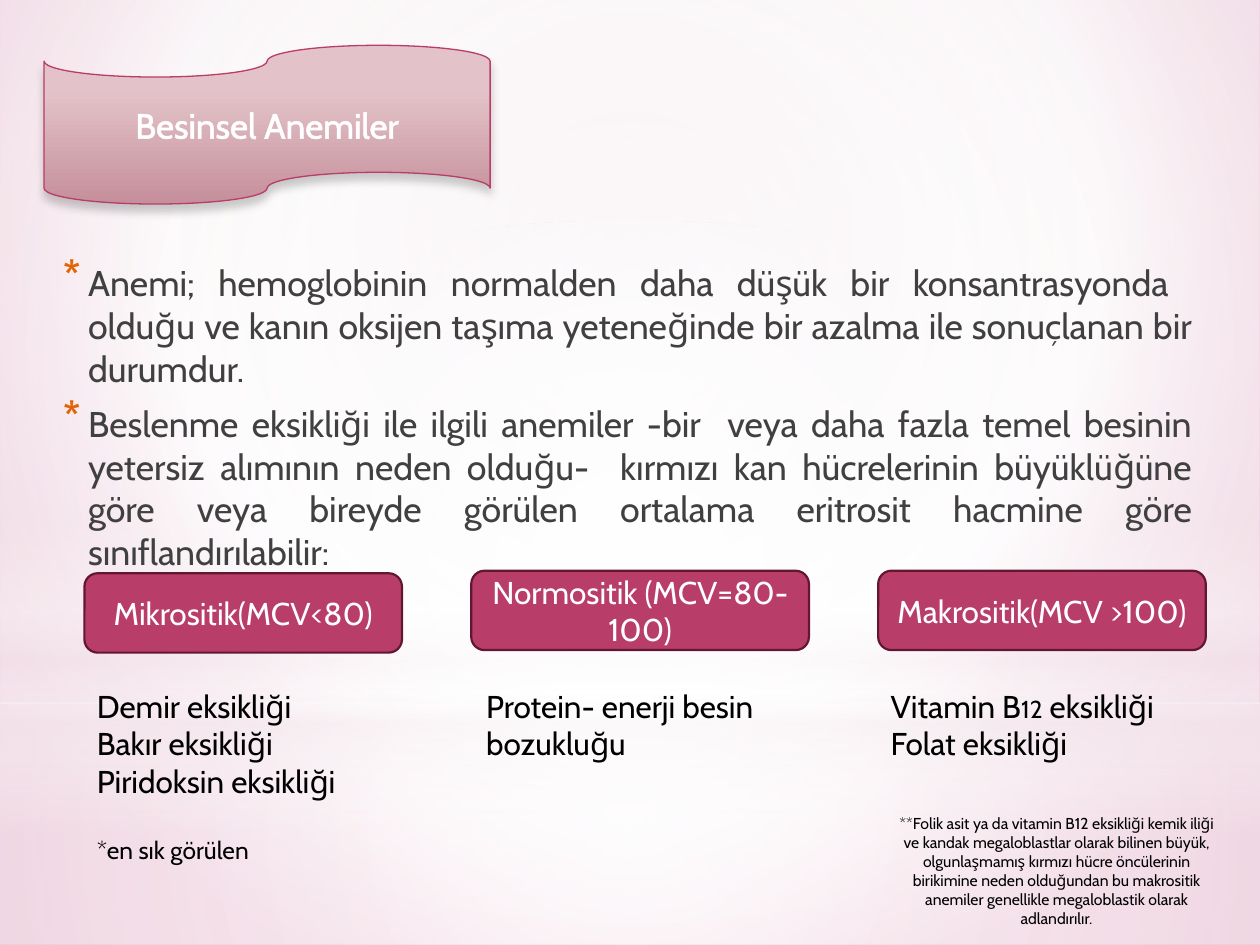
from dataclasses import dataclass

from lxml import etree
from pptx import Presentation
from pptx.dml.color import RGBColor
from pptx.enum.shapes import MSO_SHAPE as Shape
from pptx.enum.text import MSO_ANCHOR as Anchor, MSO_AUTO_SIZE as AutoSize, PP_ALIGN as Align
from pptx.oxml import parse_xml
from pptx.oxml.ns import nsdecls, qn
from pptx.util import Inches, Pt


@dataclass(frozen=True)
class Theme:
    font: str = "Cabin"
    white: str = "FFFFFF"
    black: str = "000000"
    body: str = "404040"
    bullet: str = "E36406"
    accent: str = "B83D68"
    accent_dark: str = "621631"
    blush: str = "F4E7ED"
    rose: str = "E3C3C9"
    rose_dark: str = "C58F9B"
    edge: str = "E09DBC"
    glow: str = "EDDAE2"
    title_size: float = 20
    body_size: float = 20.4
    card_size: float = 18
    note_size: float = 14
    small_size: float = 9


def gradient(stops, center=None):
    """Fill of (position, colour, opacity) stops: circular around center, else top to bottom."""
    marks = "".join(
        f'<a:gs pos="{pos * 1000}"><a:srgbClr val="{color}">'
        f'<a:alpha val="{opacity * 1000}"/></a:srgbClr></a:gs>'
        for pos, color, opacity in stops)
    if center:
        left, top, right, bottom = (side * 1000 for side in center)
        course = (f'<a:path path="circle"><a:fillToRect l="{left}" t="{top}" '
                  f'r="{right}" b="{bottom}"/></a:path>')
    else:
        course = '<a:lin ang="5400000" scaled="0"/>'
    return parse_xml(f'<a:gradFill {nsdecls("a")} rotWithShape="1">'
                     f'<a:gsLst>{marks}</a:gsLst>{course}</a:gradFill>')


class SlideBuilder:
    def __init__(self, page, theme):
        self.page = page
        self.theme = theme

    def background(self, stops, center):
        self.page.background.fill.solid()
        holder = self.page.element.find(".//" + qn("p:bgPr"))
        holder.replace(holder.find(qn("a:solidFill")), gradient(stops, center))

    def shape(self, kind, area, fill, line=None, line_width=1):
        """Add a preset shape; fill is a colour or a gradient element."""
        shape = self.page.shapes.add_shape(kind, *map(Inches, area))
        shape.shadow.inherit = False
        shape.fill.solid()
        if isinstance(fill, str):
            shape.fill.fore_color.rgb = RGBColor.from_string(fill)
        else:
            props = shape.element.spPr
            props.replace(props.find(qn("a:solidFill")), fill)
        if line:
            shape.line.color.rgb = RGBColor.from_string(line)
            shape.line.width = Pt(line_width)
        else:
            shape.line.fill.background()
        return shape

    def set_lines(self, frame, lines, size, color, align=Align.LEFT):
        """Fill a frame; a line is a string or a list of (text, size) spans."""
        frame.word_wrap = True
        for index, line in enumerate(lines):
            para = frame.paragraphs[0] if index == 0 else frame.add_paragraph()
            para.alignment = align
            for text, span_size in [(line, size)] if isinstance(line, str) else line:
                span = para.add_run()
                span.text = text
                span.font.name = self.theme.font
                span.font.size = Pt(span_size)
                span.font.color.rgb = RGBColor.from_string(color)

    def text(self, area, lines, size, color=None, align=Align.LEFT, grow=True):
        box = self.page.shapes.add_textbox(*map(Inches, area))
        frame = box.text_frame
        self.set_lines(frame, lines, size, color or self.theme.black, align)
        frame.auto_size = AutoSize.SHAPE_TO_FIT_TEXT if grow else AutoSize.NONE
        return box

    def bullets(self, area, lines):
        theme = self.theme
        box = self.text(area, lines, theme.body_size, theme.body, Align.JUSTIFY, grow=False)
        for index, para in enumerate(box.text_frame.paragraphs):
            props = para._p.get_or_add_pPr()
            props.set("marL", str(Inches(0.25)))
            props.set("indent", str(Inches(-0.2)))
            color = etree.SubElement(props, qn("a:buClr"))
            etree.SubElement(color, qn("a:srgbClr"), val=theme.bullet)
            etree.SubElement(props, qn("a:buSzPct"), val="130000")
            etree.SubElement(props, qn("a:buChar"), char="*")
            para.space_before = Pt(4 if index else 0)
            para.space_after = Pt(3)

    def card(self, area, label):
        theme = self.theme
        card = self.shape(Shape.ROUNDED_RECTANGLE, area, theme.accent, theme.accent_dark, 1.25)
        card.text_frame.vertical_anchor = Anchor.MIDDLE
        self.set_lines(card.text_frame, [label], theme.card_size, theme.white, Align.CENTER)

    def banner(self, area, title):
        theme = self.theme
        fill = gradient([(28, theme.rose, 100), (100, theme.rose_dark, 100)])
        banner = self.shape(Shape.FLOWCHART_PUNCHED_TAPE, area, fill, theme.accent, 0.75)
        effects = banner.element.spPr.find(qn("a:effectLst"))
        effects.append(parse_xml(
            f'<a:outerShdw {nsdecls("a")} blurRad="{Pt(5)}" dist="{Pt(4)}" dir="5400000" '
            f'rotWithShape="0"><a:srgbClr val="{theme.black}"><a:alpha val="20000"/>'
            '</a:srgbClr></a:outerShdw>'))
        frame = banner.text_frame
        frame.vertical_anchor = Anchor.MIDDLE
        self.set_lines(frame, [title], theme.title_size, theme.white, Align.CENTER)
        outline = parse_xml(
            f'<a:ln {nsdecls("a")} w="{Pt(1.45)}"><a:solidFill>'
            f'<a:srgbClr val="{theme.white}"/></a:solidFill></a:ln>')
        frame.paragraphs[0].runs[0]._r.get_or_add_rPr().insert(0, outline)


def draw_backdrop(builder):
    theme = builder.theme
    white, blush = theme.white, theme.blush
    middle = (50, 50, 50, 50)
    builder.background([(0, theme.glow, 100), (60, white, 100), (100, theme.edge, 100)],
                       (20, 10, 20, 60))
    layers = [
        (Shape.RECTANGLE, (0, 5.58, 10, 1.92),
         [(0, white, 91), (37, white, 76), (100, blush, 79)], middle),
        (Shape.RECTANGLE, (0, 0, 10, 5.58),
         [(0, white, 89), (48, white, 62), (100, blush, 79)], middle),
        (Shape.RECTANGLE, (0, 4.12, 10, 2.5),
         [(0, white, 0), (29, white, 30), (45, blush, 40),
          (55, white, 26), (65, blush, 60), (100, white, 0)], None),
        (Shape.OVAL, (0, 1.75, 10, 5.58), [(0, white, 100), (56, white, 0)], middle),
    ]
    for kind, area, stops, center in layers:
        builder.shape(kind, area, gradient(stops, center))


def main():
    deck = Presentation()
    deck.slide_width, deck.slide_height = Inches(10), Inches(7.5)
    theme = Theme()
    builder = SlideBuilder(deck.slides.add_slide(deck.slide_layouts[6]), theme)

    draw_backdrop(builder)
    builder.bullets((0.35, 2.02, 9.21, 2.36), [
        "Anemi; hemoglobinin normalden daha düşük bir konsantrasyonda  olduğu ve kanın "
        "oksijen taşıma yeteneğinde bir azalma ile sonuçlanan bir durumdur. ",
        "Beslenme eksikliği ile ilgili anemiler -bir  veya daha fazla temel besinin yetersiz "
        "alımının neden olduğu-  kırmızı kan hücrelerinin büyüklüğüne göre veya bireyde "
        "görülen ortalama eritrosit hacmine göre sınıflandırılabilir:",
    ])
    builder.banner((0.35, 0.36, 3.54, 1.26), "Besinsel Anemiler")

    big, small = theme.card_size, theme.note_size
    groups = [
        ((0.67, 4.55, 2.52, 0.63), "Mikrositik(MCV<80)", (0.67, 5.4, 2.52, 1.01),
         ["Demir eksikliği", "Bakır eksikliği", "Piridoksin eksikliği"]),
        ((3.74, 4.53, 2.68, 0.63), "Normositik (MCV=80-100)", (3.76, 5.4, 2.52, 0.71),
         ["Protein- enerji besin bozukluğu"]),
        ((6.97, 4.53, 2.6, 0.63), "Makrositik(MCV >100)", (6.97, 5.4, 2.6, 0.71),
         [[("Vitamin B", big), ("12", small), (" eksikliği", big)], "Folat eksikliği"]),
    ]
    for card_area, label, cause_area, causes in groups:
        builder.card(card_area, label)
        builder.text(cause_area, causes, big)

    builder.text((0.67, 6.58, 2.28, 0.34), ["*en sık görülen"], small)
    builder.text((6.97, 6.41, 2.83, 1.01), [
        "**Folik asit ya da vitamin B12 eksikliği kemik iliği ve kandak megaloblastlar olarak "
        "bilinen büyük, olgunlaşmamış kırmızı hücre öncülerinin birikimine neden olduğundan "
        "bu makrositik anemiler genellikle megaloblastik olarak adlandırılır.",
    ], theme.small_size, align=Align.CENTER)

    deck.save("out.pptx")


if __name__ == "__main__":
    main()
